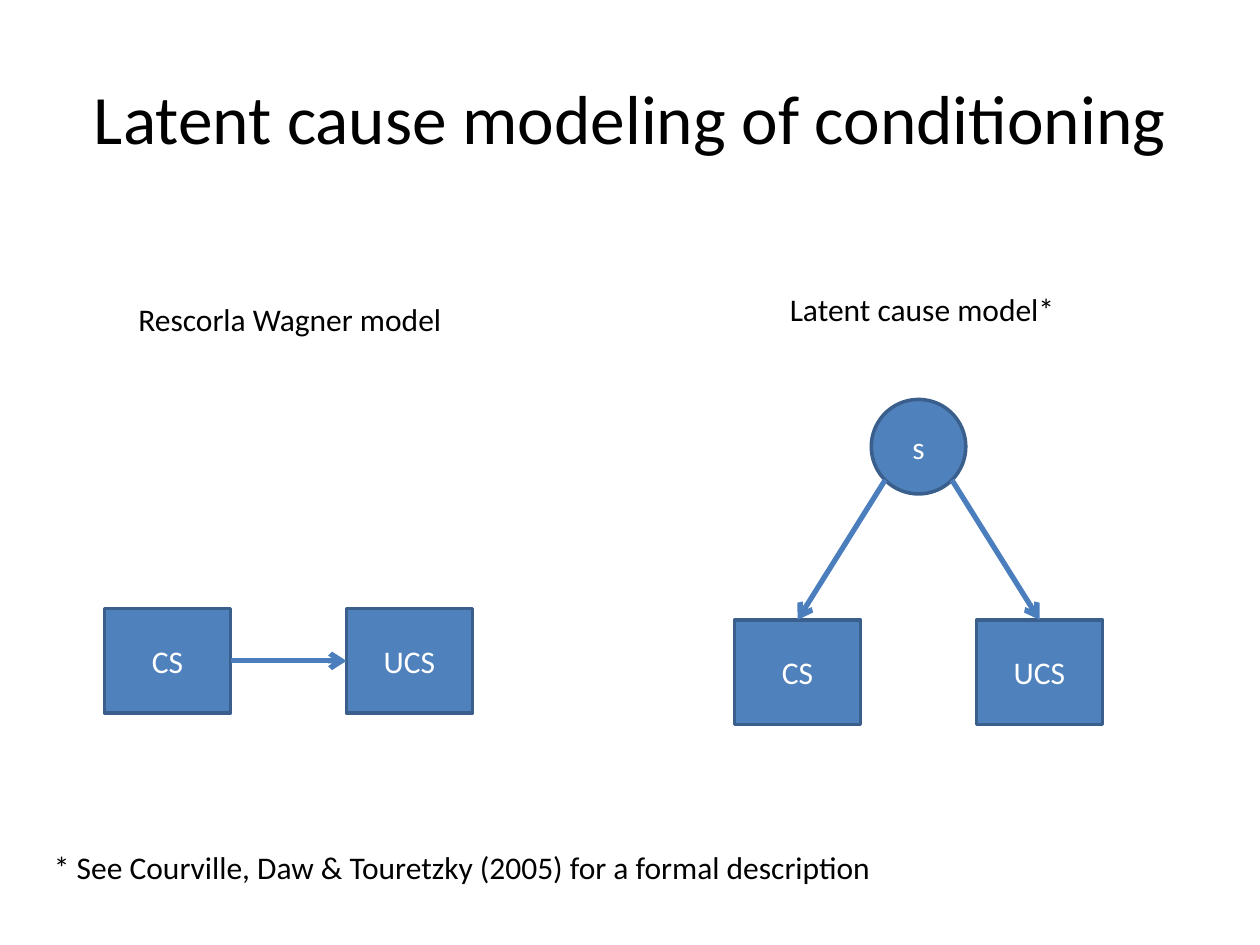
from math import sqrt

from lxml import etree
from pptx import Presentation
from pptx.dml.color import RGBColor
from pptx.enum.shapes import MSO_CONNECTOR as Connector, MSO_SHAPE as Shape
from pptx.enum.text import MSO_ANCHOR as Anchor, PP_ALIGN as Align
from pptx.oxml.ns import qn
from pptx.util import Inches, Pt

FONT = "Calibri"
BLACK, WHITE = "000000", "FFFFFF"
NODE_FILL, NODE_LINE, ARROW_COLOR = "4F81BD", "3A5F8C", "4B7EBC"
NODE_WIDTH, NODE_HEIGHT, NODE_STEP = 1, 0.83, 1.92
CAUSE_SIZE = 0.75


def color(hex_string):
    return RGBColor.from_string(hex_string)


def write(shape, text, size=18, font_color=BLACK, align=Align.LEFT, anchor=Anchor.TOP):
    frame = shape.text_frame
    frame.word_wrap = True
    frame.vertical_anchor = anchor
    frame.text = text
    paragraph = frame.paragraphs[0]
    paragraph.alignment = align
    font = paragraph.runs[0].font
    font.name, font.size = FONT, Pt(size)
    font.color.rgb = color(font_color)


def add_label(slide, text, left, top, width, height=0.4, **style):
    box = slide.shapes.add_textbox(*map(Inches, (left, top, width, height)))
    write(box, text, **style)


def add_node(slide, preset, text, left, top, width, height):
    node = slide.shapes.add_shape(preset, *map(Inches, (left, top, width, height)))
    node.shadow.inherit = False
    node.fill.solid()
    node.fill.fore_color.rgb = color(NODE_FILL)
    node.line.color.rgb = color(NODE_LINE)
    node.line.width = Pt(2)
    write(node, text, font_color=WHITE, align=Align.CENTER, anchor=Anchor.MIDDLE)
    return node


def add_arrow(slide, start, end):
    """Draw an arrow between two (x, y) points, with its head at the end."""
    arrow = slide.shapes.add_connector(
        Connector.STRAIGHT, *map(Inches, (*start, *end)))
    arrow.line.color.rgb = color(ARROW_COLOR)
    arrow.line.width = Pt(3)
    etree.SubElement(arrow.line._get_or_add_ln(), qn("a:tailEnd"), type="arrow")
    etree.SubElement(arrow._element.spPr, qn("a:effectLst"))
    return arrow


def add_stimuli(slide, left, top):
    return [
        add_node(slide, Shape.RECTANGLE, text, left + index * NODE_STEP, top,
                 NODE_WIDTH, NODE_HEIGHT)
        for index, text in enumerate(("CS", "UCS"))
    ]


def add_rescorla_wagner_model(slide, left, top):
    add_label(slide, "Rescorla Wagner model", left + 0.17, top, 2.67)
    stimuli_top = top + 2.5
    conditioned, unconditioned = add_stimuli(slide, left, stimuli_top)
    middle = stimuli_top + NODE_HEIGHT / 2
    arrow = add_arrow(slide, (left + NODE_WIDTH, middle), (left + NODE_STEP, middle))
    arrow.begin_connect(conditioned, 3)
    arrow.end_connect(unconditioned, 1)


def add_latent_cause_model(slide, left, top):
    add_label(slide, "Latent cause model*", left + 0.34, top, 2.67)
    stimuli_top = top + 2.67
    stimuli = add_stimuli(slide, left, stimuli_top)

    radius = CAUSE_SIZE / 2
    center_x = left + (NODE_STEP + NODE_WIDTH) / 2
    center_y = top + 0.92 + radius
    add_node(slide, Shape.OVAL, "s", center_x - radius, center_y - radius,
             CAUSE_SIZE, CAUSE_SIZE)

    diagonal = radius / sqrt(2)
    for side, stimulus in zip((-1, 1), stimuli):
        start = center_x + side * diagonal, center_y + diagonal
        end = center_x + side * NODE_STEP / 2, stimuli_top
        add_arrow(slide, start, end).end_connect(stimulus, 0)


def main():
    presentation = Presentation()
    presentation.slide_width, presentation.slide_height = Inches(10), Inches(7.5)
    slide = presentation.slides.add_slide(presentation.slide_layouts[6])
    add_label(slide, "Latent cause modeling of conditioning", 0.5, 0.3, 9, 1.25,
              size=39.6, align=Align.CENTER, anchor=Anchor.MIDDLE)
    add_rescorla_wagner_model(slide, 0.83, 2.33)
    add_latent_cause_model(slide, 5.83, 2.25)
    add_label(slide, "* See Courville, Daw & Touretzky (2005) for a formal description",
              0.33, 6.68, 9.58)
    presentation.save("out.pptx")


if __name__ == "__main__":
    main()
